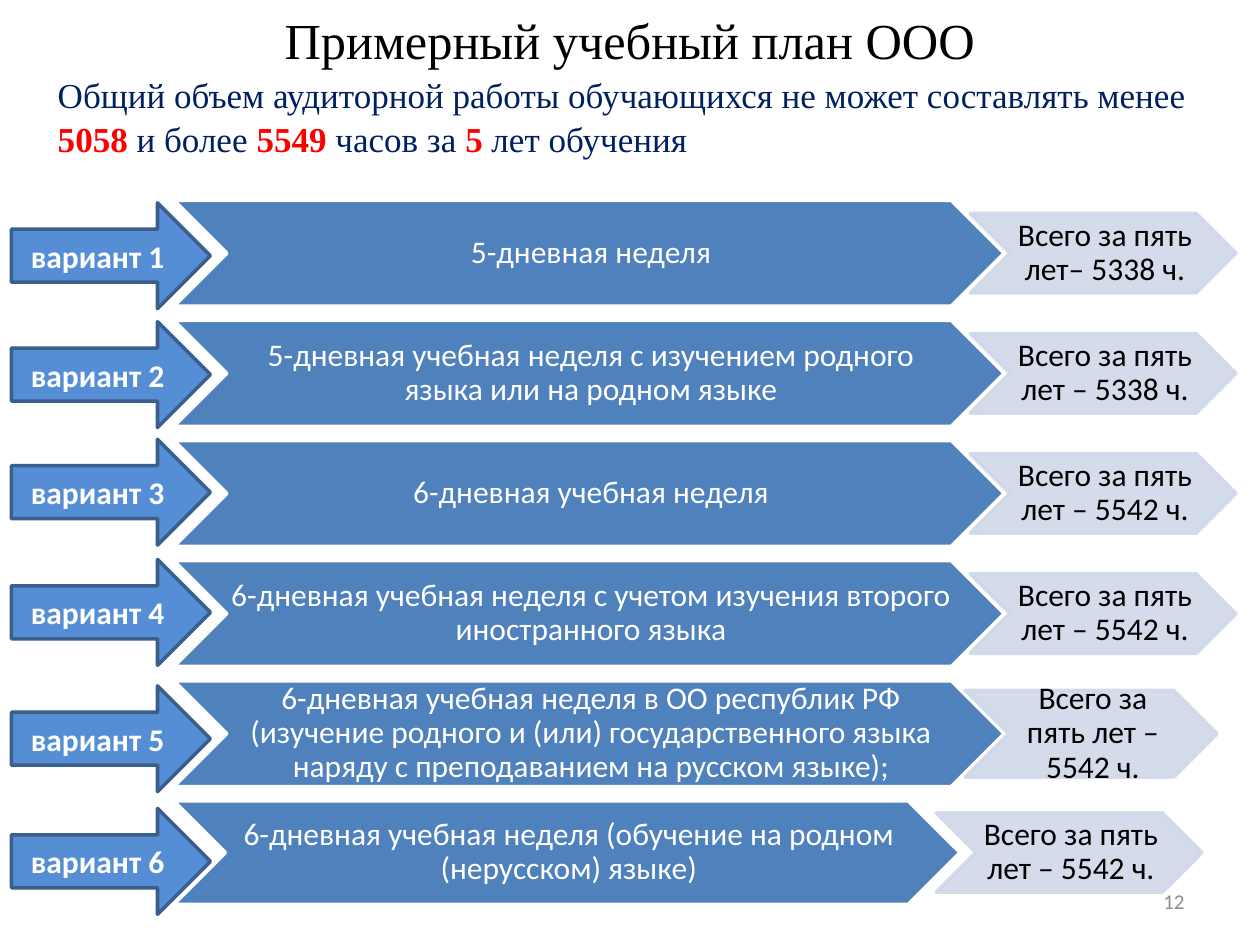
from collections import namedtuple
from dataclasses import dataclass

from lxml import etree
from pptx import Presentation, util as u
from pptx.dml.color import RGBColor
from pptx.enum import shapes, text
from pptx.oxml.ns import qn

# The slide is a fine grid; every Box is counted in its columns and rows.
COLUMNS, ROWS = 1000, 750
WIDTH, HEIGHT = u.Inches(10), u.Inches(7.5)
Box = namedtuple("Box", "x y w h")
Variant = namedtuple("Variant", "week total band_w band_h total_x total_w total_h arrow_dy")


@dataclass(frozen=True)
class Theme:
    serif: str = "Times New Roman"
    sans: str = "Calibri"
    title: float = 28.8
    lead: int = 20
    body: int = 18
    small: int = 12
    line: int = 2
    black: str = "000000"
    white: str = "FFFFFF"
    navy: str = "002060"
    red: str = "FF0000"
    grey: str = "8C8C8C"
    band: str = "4F81BD"
    total: str = "D0D8E8"
    arrow: str = "558ED5"
    arrow_edge: str = "3A5F8C"


THEME = Theme()
TITLE = "Примерный учебный план ООО"
LEAD = [("Общий объем аудиторной работы обучающихся не может составлять менее ", False),
        ("5058", True), (" и более ", False), ("5549", True),
        (" часов за ", False), ("5", True), (" лет обучения", False)]
VARIANTS = [
    Variant("5-дневная неделя", "Всего за пять лет– 5338 ч.", 659, 84, 632, 211, 63, 2),
    Variant("5-дневная учебная неделя с изучением родного языка или на родном языке",
            "Всего за пять лет – 5338 ч.", 659, 84, 632, 211, 63, 1),
    Variant("6-дневная учебная неделя",
            "Всего за пять лет – 5542 ч.", 659, 84, 632, 211, 63, -1),
    Variant("6-дневная учебная неделя с учетом изучения второго иностранного языка",
            "Всего за пять лет – 5542 ч.", 659, 84, 632, 211, 63, -1),
    Variant("6-дневная учебная неделя в ОО республик РФ (изучение родного и (или) "
            "государственного языка наряду с преподаванием на русском языке);",
            "Всего за пять лет – 5542 ч.", 659, 84, 628, 200, 69, 4),
    Variant("6-дневная учебная неделя (обучение на родном (нерусском) языке)",
            "Всего за пять лет – 5542 ч.", 624, 82, 605, 211, 63, 6),
]


def place(box):
    return (round(box.x * WIDTH / COLUMNS), round(box.y * HEIGHT / ROWS),
            round(box.w * WIDTH / COLUMNS), round(box.h * HEIGHT / ROWS))


def apply(target, values):
    for name, value in values.items():
        setattr(target, name, value)


def write(frame, runs, size, font, align, anchor=text.MSO_ANCHOR.MIDDLE, **spacing):
    """Fill a text frame with one paragraph of (words, colour, bold) runs."""
    apply(frame, {"word_wrap": True, "auto_size": text.MSO_AUTO_SIZE.NONE,
                  "vertical_anchor": anchor})
    paragraph = frame.paragraphs[0]
    apply(paragraph, {"alignment": align, **spacing})
    for words, colour, bold in runs:
        run = paragraph.add_run()
        run.text = words
        apply(run.font, {"size": u.Pt(size), "name": font, "bold": bold})
        run.font.color.rgb = RGBColor.from_string(colour)


def add_block(slide, preset, box, fill, edge, opacity=None):
    block = slide.shapes.add_shape(preset, *place(box))
    block.shadow.inherit = False
    block.fill.solid()
    block.fill.fore_color.rgb = RGBColor.from_string(fill)
    block.line.color.rgb = RGBColor.from_string(edge)
    block.line.width = u.Pt(THEME.line)
    if opacity:
        for colour in block.fill._xPr.iter(qn("a:srgbClr")):
            etree.SubElement(colour, qn("a:alpha"), val=str(opacity * 1000))
    return block


def add_chevron(slide, box, words, colour, fill, edge, opacity=None):
    chevron = add_block(slide, shapes.MSO_SHAPE.CHEVRON, box, fill, edge, opacity)
    apply(chevron.text_frame, {"margin_left": u.Inches(0.03), "margin_right": 0,
                               "margin_top": u.Inches(0.01), "margin_bottom": u.Inches(0.01)})
    write(chevron.text_frame, [(words, colour, False)], THEME.body, THEME.sans,
          text.PP_ALIGN.CENTER, line_spacing=0.9)


def add_variant(slide, box, number, variant):
    """Place a week chevron, its total of hours and the numbered arrow."""
    band = Box(box.x, box.y, variant.band_w, variant.band_h)
    total = Box(box.x + variant.total_x, box.y + (variant.band_h - variant.total_h) / 2,
                variant.total_w, variant.total_h)
    add_chevron(slide, band, variant.week, THEME.white, THEME.band, THEME.white)
    add_chevron(slide, total, variant.total, THEME.black, THEME.total, THEME.total, 90)
    arrow = add_block(slide, shapes.MSO_SHAPE.RIGHT_ARROW,
                      Box(box.x - 129, box.y + variant.arrow_dy, 158, 84),
                      THEME.arrow, THEME.arrow_edge)
    write(arrow.text_frame, [(f"вариант {number}", THEME.white, True)],
          THEME.body, THEME.sans, text.PP_ALIGN.CENTER)


def add_variants(slide, box):
    pitch = box.h / len(VARIANTS)
    for row, variant in enumerate(VARIANTS):
        add_variant(slide, Box(box.x, box.y + row * pitch, box.w, pitch), row + 1, variant)


def add_title(slide, box):
    heading = slide.shapes.title
    apply(heading, dict(zip(("left", "top", "width", "height"), place(box))))
    write(heading.text_frame, [(TITLE, THEME.black, False)], THEME.title, THEME.serif,
          text.PP_ALIGN.CENTER)


def add_lead(slide, box):
    lead = slide.shapes.add_textbox(*place(box))
    runs = [(words, THEME.red if key else THEME.navy, key) for words, key in LEAD]
    write(lead.text_frame, runs, THEME.lead, THEME.serif, text.PP_ALIGN.LEFT,
          text.MSO_ANCHOR.TOP, line_spacing=1.05)


def add_page_number(slide, box):
    page = slide.shapes.add_textbox(*place(box))
    write(page.text_frame, [("12", THEME.grey, False)], THEME.small, THEME.sans,
          text.PP_ALIGN.RIGHT)


def main():
    deck = Presentation()
    apply(deck, {"slide_width": WIDTH, "slide_height": HEIGHT})
    slide = deck.slides.add_slide(deck.slide_layouts.get_by_name("Title Only"))
    add_title(slide, Box(50, 3, 900, 56))
    add_variants(slide, Box(138, 159, 843, 572))
    add_page_number(slide, Box(717, 695, 233, 40))
    add_lead(slide, Box(36, 52, 961, 77))
    deck.save("out.pptx")


if __name__ == "__main__":
    main()
